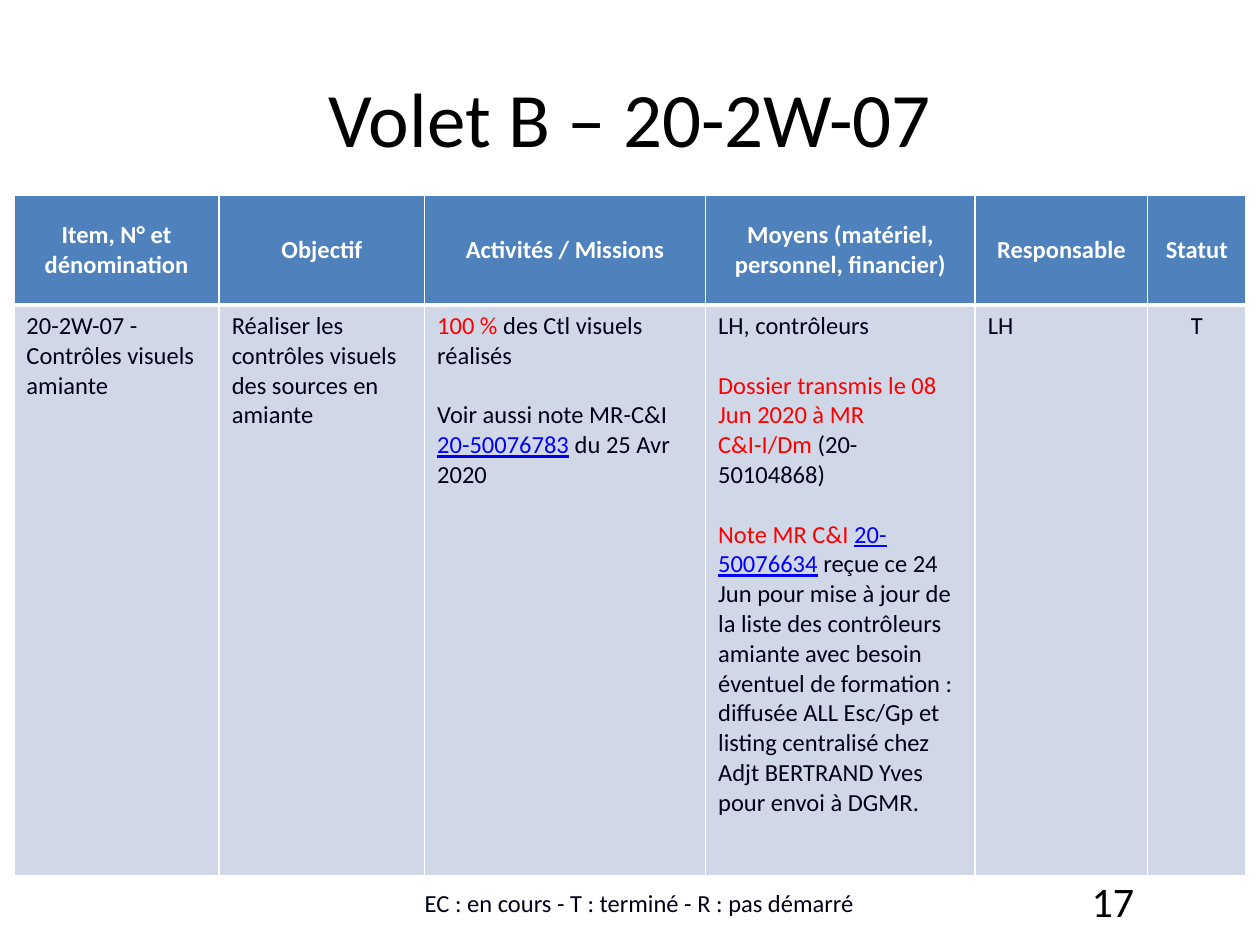
from lxml.etree import SubElement
from pptx import Presentation
from pptx.dml.color import RGBColor
from pptx.enum.text import MSO_ANCHOR as Anchor, PP_ALIGN as Align
from pptx.oxml.ns import qn
from pptx.util import Inches, Pt

BLACK = RGBColor(0x00, 0x00, 0x00)
WHITE = RGBColor(0xFF, 0xFF, 0xFF)
INK = RGBColor(0x00, 0x00, 0x18)
RED = RGBColor(0xFF, 0x00, 0x00)
LINK = RGBColor(0x00, 0x00, 0xFF)
HEADER_FILL = RGBColor(0x4F, 0x81, 0xBD)
BODY_FILL = RGBColor(0xD0, 0xD8, 0xE8)
FONT = "Calibri"
BLANK_LINE = Pt(17)

COLUMNS = [
    ("Item, N° et dénomination", 1.63),
    ("Objectif", 1.63),
    ("Activités / Missions", 2.23),
    ("Moyens (matériel, personnel, financier)", 2.14),
    ("Responsable", 1.37),
    ("Statut", 0.78),
]
ROW_HEIGHTS = [0.87, 4.53]

# Each cell is a list of paragraphs, each paragraph a list of (text, colour).
BODY = [
    [[("20-2W-07 - Contrôles visuels amiante", INK)]],
    [[("Réaliser les contrôles visuels des sources en amiante", INK)]],
    [
        [("100 %", RED), (" des Ctl visuels réalisés", INK)],
        [("Voir aussi note MR-C&I ", INK), ("20-50076783", LINK),
         (" du 25 Avr 2020", INK)],
    ],
    [
        [("LH, contrôleurs", INK)],
        [("Dossier transmis le 08 Jun 2020 à MR C&I-I/Dm", RED),
         (" (20-50104868)", INK)],
        [("Note MR C&I ", RED), ("20-50076634", LINK),
         (" reçue ce 24 Jun pour mise à jour de la liste des contrôleurs "
          "amiante avec besoin éventuel de formation : diffusée ALL Esc/Gp et "
          "listing centralisé chez Adjt BERTRAND Yves pour envoi à DGMR.", INK)],
    ],
    [[("LH", INK)]],
    [[("T", INK)]],
]


def write_paragraphs(frame, paragraphs, size, align, bold=False):
    """Fill a text frame, leaving one line's height between paragraphs."""
    frame.word_wrap = True
    for index, spans in enumerate(paragraphs):
        para = frame.add_paragraph() if index else frame.paragraphs[0]
        para.alignment = align
        if index:
            para.space_before = BLANK_LINE
        para.font.name, para.font.size, para.font.bold = FONT, Pt(size), bold
        for text, colour in spans:
            span = para.add_run()
            span.text = text
            span.font.color.rgb = colour
            if colour == LINK:
                span.font.underline = True


def style_cell(cell, fill, top, bottom):
    """Give a cell white borders, 1 pt at the sides, and a plain fill."""
    properties = cell._tc.get_or_add_tcPr()
    for side, width in (("L", 1), ("R", 1), ("T", top), ("B", bottom)):
        line = SubElement(properties, qn(f"a:ln{side}"), w=str(Pt(width)))
        solid = SubElement(line, qn("a:solidFill"))
        SubElement(solid, qn("a:srgbClr"), val=str(WHITE))
    cell.fill.solid()
    cell.fill.fore_color.rgb = fill


deck = Presentation()
deck.slide_width, deck.slide_height = Inches(10), Inches(7.5)
page = deck.slides.add_slide(deck.slide_layouts[6])

# Table
table_width = sum(width for _, width in COLUMNS)
table_left = (10 - table_width) / 2
table_top = 1.55
table_bottom = table_top + sum(ROW_HEIGHTS)
table = page.shapes.add_table(
    len(ROW_HEIGHTS), len(COLUMNS), Inches(table_left), Inches(table_top),
    Inches(table_width), Inches(sum(ROW_HEIGHTS))).table
for row, height in zip(table.rows, ROW_HEIGHTS):
    row.height = Inches(height)
for index, ((heading, width), paragraphs) in enumerate(zip(COLUMNS, BODY)):
    table.columns[index].width = Inches(width)

    header = table.cell(0, index)
    style_cell(header, HEADER_FILL, top=1, bottom=3)
    header.vertical_anchor = Anchor.MIDDLE
    write_paragraphs(header.text_frame, [[(heading, WHITE)]], 14, Align.CENTER, True)

    body = table.cell(1, index)
    style_cell(body, BODY_FILL, top=3, bottom=1)
    body.vertical_anchor = Anchor.TOP
    align = Align.CENTER if heading == "Statut" else Align.LEFT
    write_paragraphs(body.text_frame, paragraphs, 14, align)

# Title, page number and legend
for text, size, colour, align, anchor, place in [
    ("Volet B – 20-2W-07", 44, BLACK, Align.CENTER, Anchor.MIDDLE,
     (0.5, 0.3, 9, 1.25)),
    ("17", 24, BLACK, Align.RIGHT, Anchor.MIDDLE,
     (7.17, table_bottom, 1.93, 0.4)),
    ("EC : en cours - T : terminé - R : pas démarré", 14, INK, Align.CENTER,
     Anchor.BOTTOM, (2.32, table_bottom, 5.51, 0.38)),
]:
    box = page.shapes.add_textbox(*map(Inches, place))
    box.text_frame.vertical_anchor = anchor
    write_paragraphs(box.text_frame, [[(text, colour)]], size, align)

deck.save("out.pptx")
